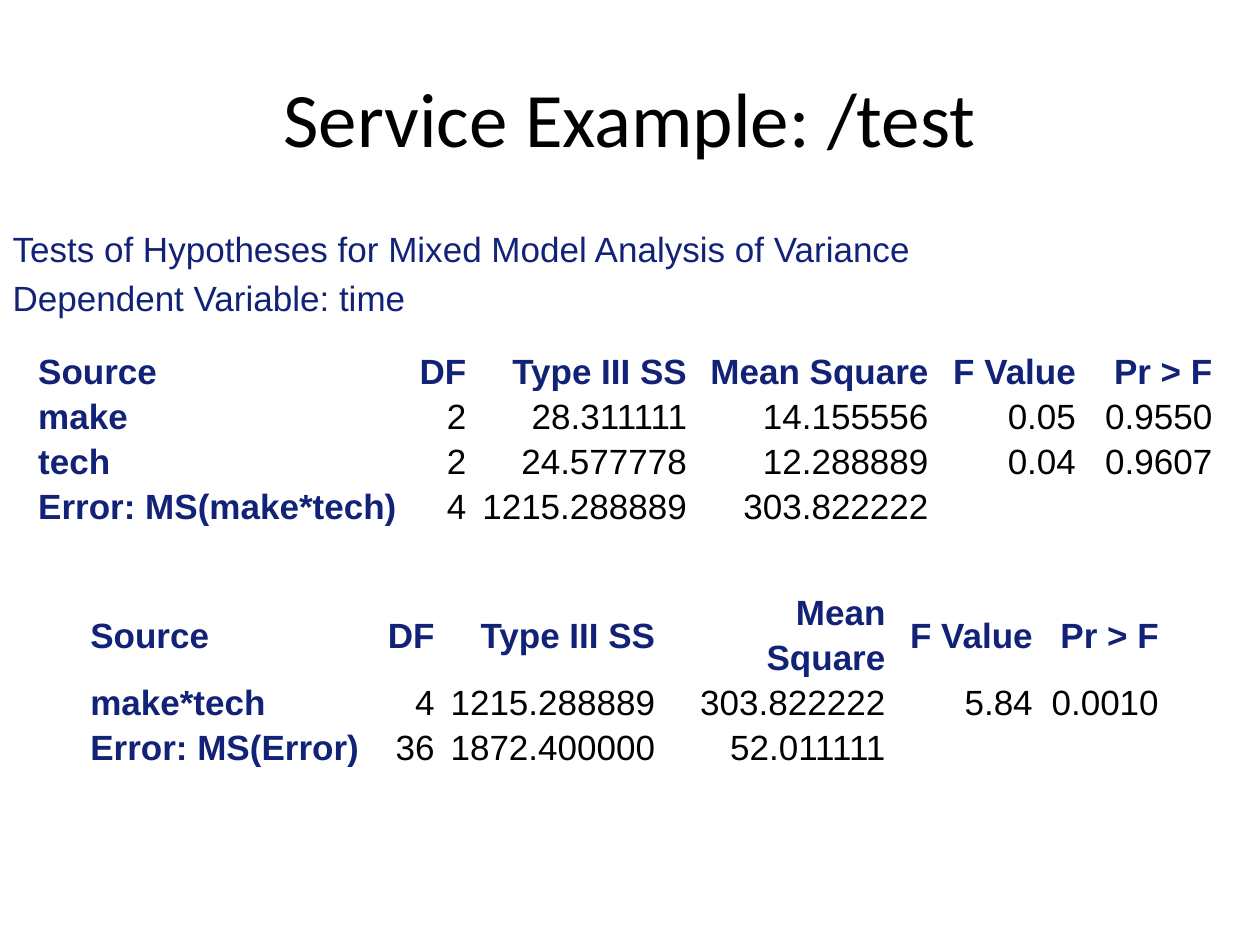
from lxml.etree import SubElement
from pptx import Presentation
from pptx.dml.color import RGBColor
from pptx.enum.text import MSO_ANCHOR, PP_ALIGN
from pptx.oxml.ns import qn
from pptx.util import Cm, Pt

NAVY = "112277"
BLACK = "000000"
HEADINGS = ["Source", "DF", "Type III SS", "Mean Square", "F Value", "Pr > F"]
MAIN_EFFECTS = [
    HEADINGS,
    ["make", "2", "28.311111", "14.155556", "0.05", "0.9550"],
    ["tech", "2", "24.577778", "12.288889", "0.04", "0.9607"],
    ["Error: MS(make*tech)", "4", "1215.288889", "303.822222", "", ""],
]
INTERACTION = [
    HEADINGS,
    ["make*tech", "4", "1215.288889", "303.822222", "5.84", "0.0010"],
    ["Error: MS(Error)", "36", "1872.400000", "52.011111", "", ""],
]
ROW_HEIGHT = 0.9
CELL_FORMAT = {
    "margin_left": Cm(0.13),
    "margin_right": Cm(0.13),
    "margin_top": 0,
    "margin_bottom": 0,
    "vertical_anchor": MSO_ANCHOR.MIDDLE,
}
CELL_SPACING = {"line_spacing": 1.15, "space_before": Pt(5), "space_after": Pt(5)}


def colour(hex_string):
    return RGBColor.from_string(hex_string)


def apply(target, values):
    for name, value in values.items():
        setattr(target, name, value)


def style_font(font, name, size, hex_string, bold=False):
    apply(font, {"name": name, "size": Pt(size), "bold": bold})
    font.color.rgb = colour(hex_string)


def place(placeholder, box):
    apply(placeholder, dict(zip(("left", "top", "width", "height"), map(Cm, box))))


def add_heading(slide, box, wording):
    heading = slide.shapes.title
    place(heading, box)
    heading.text_frame.text = wording
    paragraph = heading.text_frame.paragraphs[0]
    paragraph.alignment = PP_ALIGN.CENTER
    style_font(paragraph.runs[0].font, "Calibri", 44, BLACK)


def add_introduction(slide, box, lines):
    introduction = slide.placeholders[1]
    place(introduction, box)
    introduction.text_frame.text = "\n".join(lines)
    for paragraph in introduction.text_frame.paragraphs:
        SubElement(paragraph._p.get_or_add_pPr(), qn("a:buNone"))
        style_font(paragraph.runs[0].font, "Arial", 20, NAVY)


def fill_cell(cell, wording, is_source, is_label):
    apply(cell, CELL_FORMAT)
    cell.fill.background()
    paragraph = cell.text_frame.paragraphs[0]
    apply(paragraph, CELL_SPACING)
    paragraph.alignment = PP_ALIGN.LEFT if is_source else PP_ALIGN.RIGHT
    if wording:
        run = paragraph.add_run()
        run.text = wording
        style_font(run.font, "Arial", 20, NAVY if is_label else BLACK, is_label)


def add_anova_table(slide, left, top, widths, records):
    table = slide.shapes.add_table(
        len(records), len(widths), Cm(left), Cm(top),
        Cm(sum(widths)), Cm(ROW_HEIGHT * len(records)),
    ).table
    apply(table, {"first_row": False, "horz_banding": False})
    for column, width in zip(table.columns, widths):
        column.width = Cm(width)
    for i, record in enumerate(records):
        table.rows[i].height = Cm(ROW_HEIGHT)
        for j, wording in enumerate(record):
            fill_cell(table.cell(i, j), wording, j == 0, i == 0 or j == 0)


def main():
    deck = Presentation()
    apply(deck, {"slide_width": Cm(25.4), "slide_height": Cm(19.05)})
    slide = deck.slides.add_slide(deck.slide_layouts[1])
    add_heading(slide, (0, 0.76, 25.4, 3.18), "Service Example: /test")
    add_introduction(slide, (0, 4.45, 25.4, 2.97), [
        "Tests of Hypotheses for Mixed Model Analysis of Variance",
        "Dependent Variable: time",
    ])
    add_anova_table(slide, 1.69, 11.86, [5.72, 1.48, 4.45, 4.64, 2.97, 2.54], INTERACTION)
    add_anova_table(slide, 0.64, 6.99, [7.62, 1.27, 4.45, 4.87, 2.97, 2.75], MAIN_EFFECTS)
    deck.save("out.pptx")


if __name__ == "__main__":
    main()
